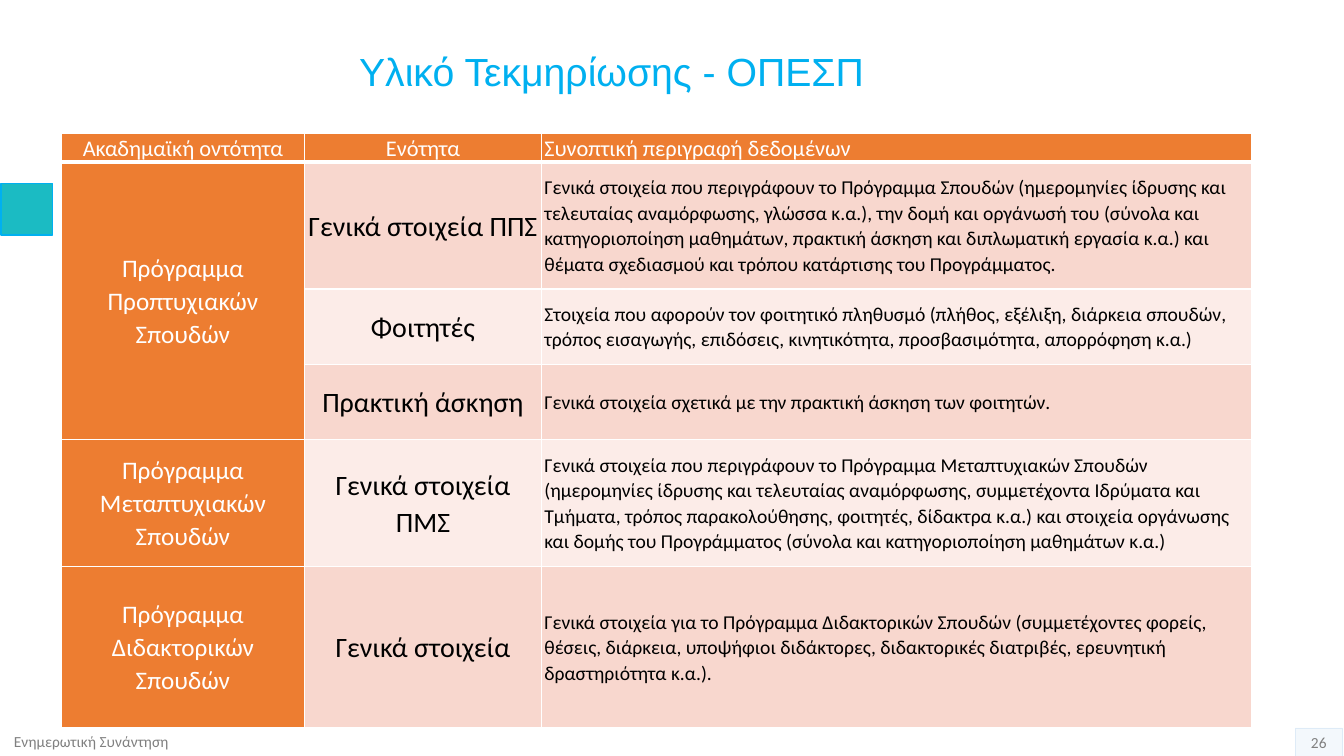
"""Build the slide on documentation material with its table of academic entities."""
import pptx
import pptx.dml.color
import pptx.enum.shapes
import pptx.enum.text
import pptx.oxml
import pptx.oxml.ns
import pptx.util
from lxml import etree

Cm, Pt = pptx.util.Cm, pptx.util.Pt
ALIGN = pptx.enum.text.PP_ALIGN
MIDDLE = pptx.enum.text.MSO_ANCHOR.MIDDLE
RECTANGLE = pptx.enum.shapes.MSO_SHAPE.RECTANGLE

TITLE = "Υλικό Τεκμηρίωσης - ΟΠΕΣΠ"
FOOTER = "Ενημερωτική Συνάντηση"
PAGE_NUMBER = "26"
HEADER = ("Ακαδημαϊκή οντότητα", "Ενότητα", "Συνοπτική περιγραφή δεδομένων")
PROGRAMMES = [
    ("Πρόγραμμα Προπτυχιακών Σπουδών", [
        ("Γενικά στοιχεία ΠΠΣ",
         "Γενικά στοιχεία που περιγράφουν το Πρόγραμμα Σπουδών (ημερομηνίες ίδρυσης και "
         "τελευταίας αναμόρφωσης, γλώσσα κ.α.), την δομή και οργάνωσή του (σύνολα και "
         "κατηγοριοποίηση μαθημάτων, πρακτική άσκηση και διπλωματική εργασία κ.α.) και "
         "θέματα σχεδιασμού και τρόπου κατάρτισης του Προγράμματος."),
        ("Φοιτητές",
         "Στοιχεία που αφορούν τον φοιτητικό πληθυσμό (πλήθος, εξέλιξη, διάρκεια σπουδών, "
         "τρόπος εισαγωγής, επιδόσεις, κινητικότητα, προσβασιμότητα, απορρόφηση κ.α.)"),
        ("Πρακτική άσκηση",
         "Γενικά στοιχεία σχετικά με την πρακτική άσκηση των φοιτητών."),
    ]),
    ("Πρόγραμμα Μεταπτυχιακών Σπουδών", [
        ("Γενικά στοιχεία ΠΜΣ",
         "Γενικά στοιχεία που περιγράφουν το Πρόγραμμα Μεταπτυχιακών Σπουδών "
         "(ημερομηνίες ίδρυσης και τελευταίας αναμόρφωσης, συμμετέχοντα Ιδρύματα και "
         "Τμήματα, τρόπος παρακολούθησης, φοιτητές, δίδακτρα κ.α.) και στοιχεία οργάνωσης "
         "και δομής του Προγράμματος (σύνολα και κατηγοριοποίηση μαθημάτων κ.α.)"),
    ]),
    ("Πρόγραμμα Διδακτορικών Σπουδών", [
        ("Γενικά στοιχεία",
         "Γενικά στοιχεία για το Πρόγραμμα Διδακτορικών Σπουδών (συμμετέχοντες φορείς, "
         "θέσεις, διάρκεια, υποψήφιοι διδάκτορες, διδακτορικές διατριβές, ερευνητική "
         "δραστηριότητα κ.α.)."),
    ]),
]
COLUMN_WIDTHS = (6.12, 5.98, 17.88)
ROW_HEIGHTS = (0.74, 3.19, 1.9, 1.9, 3.19, 4.07)
BODY_SIZES = (18, 20, 14)
ORANGE, WHITE, BLACK, GREY, CYAN = "ED7D31", "FFFFFF", "000000", "808080", "00B0F0"
BANDS = ("F8D7CE", "FCECE8")


def rgb(value):
    return pptx.dml.color.RGBColor.from_string(value)


def write(text_frame, text, size, color, align, font="Calibri", spacing=None):
    text_frame.text = text
    text_frame.word_wrap = True
    text_frame.vertical_anchor = MIDDLE
    paragraph = text_frame.paragraphs[0]
    paragraph.alignment = align
    paragraph.line_spacing = spacing
    run_font = paragraph.runs[0].font
    run_font.name, run_font.size = font, Pt(size)
    run_font.color.rgb = rgb(color)


def add_rectangle(slide, box, fill, line, line_width):
    shape = slide.shapes.add_shape(RECTANGLE, *map(Cm, box))
    shape.shadow.inherit = False
    shape.fill.solid()
    shape.fill.fore_color.rgb = rgb(fill)
    shape.line.color.rgb = rgb(line)
    shape.line.width = Pt(line_width)
    return shape


def add_borders(cell, bottom_width):
    properties = cell._tc.get_or_add_tcPr()
    sides = (("lnL", 1), ("lnR", 1), ("lnT", 1), ("lnB", bottom_width))
    for position, (side, width) in enumerate(sides):
        properties.insert(position, pptx.oxml.parse_xml(
            f'<a:{side} {pptx.oxml.ns.nsdecls("a")} w="{Pt(width)}"><a:solidFill>'
            f'<a:srgbClr val="{WHITE}"/></a:solidFill></a:{side}>'))


def fill_cell(cell, text, size, color, fill, align, bottom_width=1):
    cell.margin_left = cell.margin_right = Cm(0.07)
    cell.margin_top = cell.margin_bottom = 0
    cell.vertical_anchor = MIDDLE
    cell.fill.solid()
    cell.fill.fore_color.rgb = rgb(fill)
    add_borders(cell, bottom_width)
    if text:
        write(cell.text_frame, text, size, color, align, spacing=1.07)
        cell.vertical_anchor = MIDDLE


def add_programme_table(slide):
    table = slide.shapes.add_table(
        len(ROW_HEIGHTS), len(COLUMN_WIDTHS), Cm(1.55), Cm(3.35),
        Cm(sum(COLUMN_WIDTHS)), Cm(sum(ROW_HEIGHTS))).table
    for column, width in zip(table.columns, COLUMN_WIDTHS):
        column.width = Cm(width)
    for row, height in zip(table.rows, ROW_HEIGHTS):
        row.height = Cm(height)
    aligns = (ALIGN.CENTER, ALIGN.CENTER, ALIGN.LEFT)
    for column, text in enumerate(HEADER):
        fill_cell(table.cell(0, column), text, 16, WHITE, ORANGE, aligns[column], 3)
    row = 1
    for programme, units in PROGRAMMES:
        first = row
        for unit, description in units:
            band = BANDS[(row - 1) % 2]
            texts = (programme if row == first else "", unit, description)
            styles = ((WHITE, ORANGE), (BLACK, band), (BLACK, band))
            for column, (color, fill) in enumerate(styles):
                fill_cell(table.cell(row, column), texts[column], BODY_SIZES[column],
                          color, fill, aligns[column])
            row += 1
        if len(units) > 1:
            table.cell(first, 0).merge(table.cell(row - 1, 0))


def main():
    presentation = pptx.Presentation()
    presentation.slide_width, presentation.slide_height = Cm(33.87), Cm(19.05)
    slide = presentation.slides.add_slide(presentation.slide_layouts[5])

    add_rectangle(slide, (0.03, 4.62, 1.3, 1.3), "1BBBC3", CYAN, 1)
    footer = slide.shapes.add_textbox(Cm(0.1), Cm(18.29), Cm(11.84), Cm(0.76))
    write(footer.text_frame, FOOTER, 11, GREY, ALIGN.LEFT)
    number = add_rectangle(slide, (32.64, 18.34, 1.19, 0.71), "DEEBF7", "DEEBF7", 0.25)
    fill_color = number.fill._xPr.find(".//" + pptx.oxml.ns.qn("a:srgbClr"))
    etree.SubElement(fill_color, pptx.oxml.ns.qn("a:alpha"), val="35000")
    number.text_frame.margin_left = number.text_frame.margin_right = 0
    write(number.text_frame, PAGE_NUMBER, 11, GREY, ALIGN.CENTER)

    title = slide.shapes.title
    title.left, title.top, title.width, title.height = map(Cm, (2.9, 0.79, 25.02, 2.13))
    write(title.text_frame, TITLE, 28, CYAN, ALIGN.CENTER, "Arial", 0.9)
    add_programme_table(slide)
    presentation.save("out.pptx")


if __name__ == "__main__":
    main()
